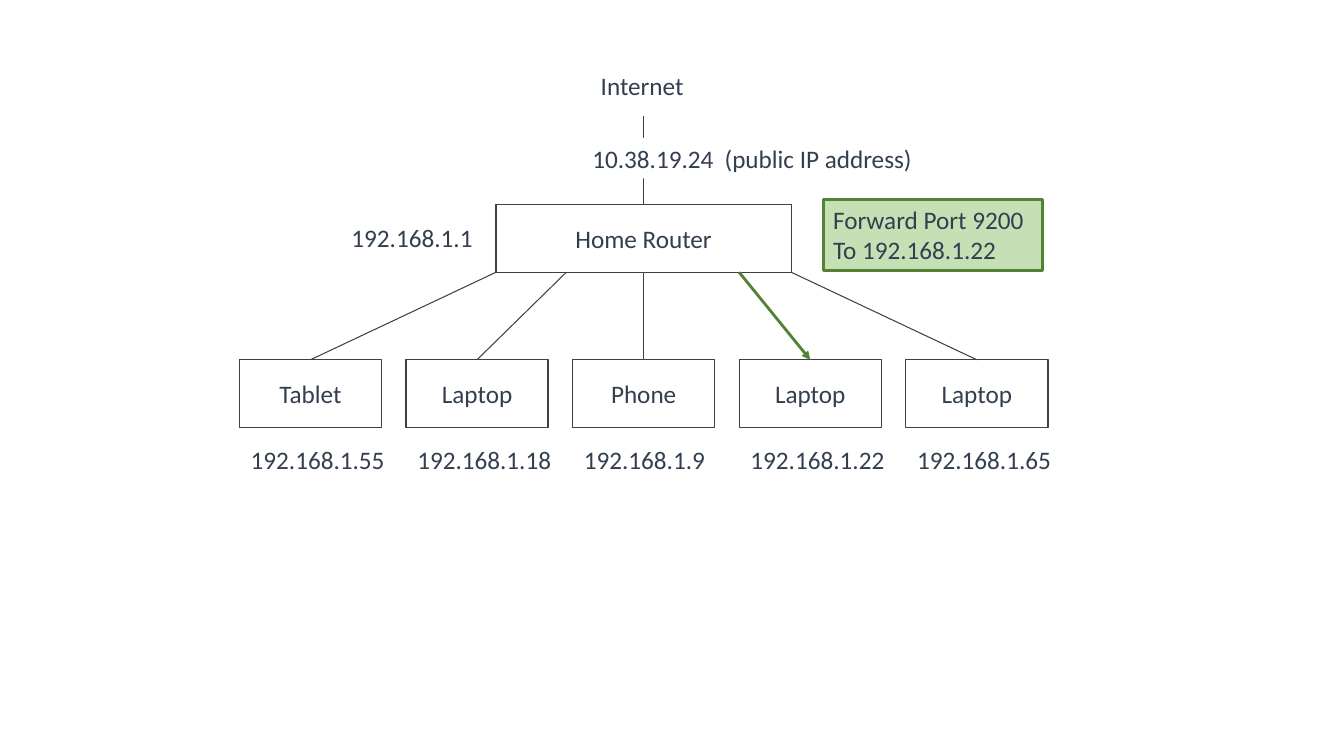
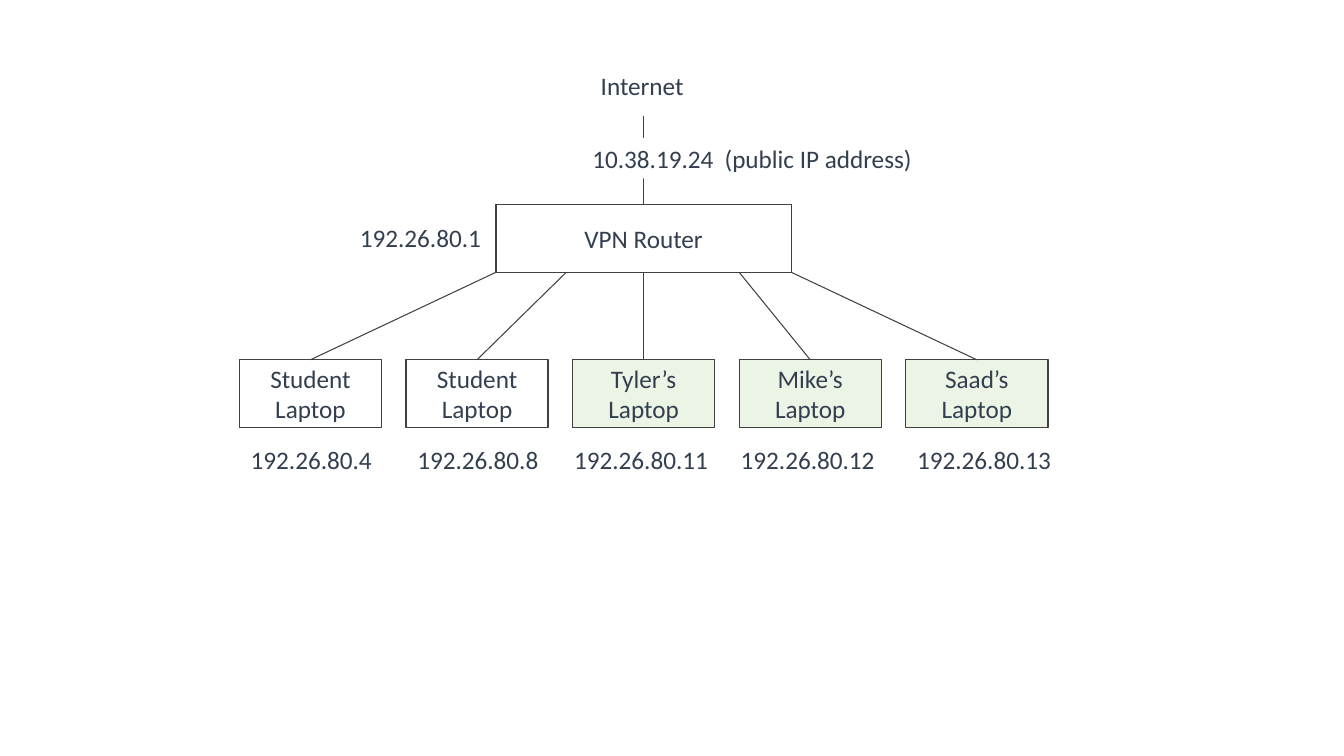
from lxml import etree
from pptx import Presentation
from pptx.dml.color import RGBColor
from pptx.enum import shapes, text
from pptx.oxml import ns
from pptx.util import Pt

INK = RGBColor(0x33, 0x3F, 0x50)
OUTLINE = RGBColor(0x40, 0x40, 0x40)
WHITE = RGBColor(0xFF, 0xFF, 0xFF)
GREEN = RGBColor(0x54, 0x82, 0x35)
RULE_FILL = RGBColor(0xC5, 0xE0, 0xB4)
MEMBER_FILL = RGBColor(0xE2, 0xF0, 0xD9)

# Shared layout, in points
ROUTER_LEFT, ROUTER_TOP, ROUTER_WIDTH, BOX_HEIGHT = 354.25, 146.25, 211, 48.25
ROUTER_BOTTOM = ROUTER_TOP + BOX_HEIGHT
ROUTER_CENTER = ROUTER_LEFT + ROUTER_WIDTH / 2
DEVICE_LEFT, DEVICE_TOP, DEVICE_WIDTH, DEVICE_PITCH = 171, 257, 101.5, 119
LINK_STARTS = [ROUTER_LEFT, 404.5, ROUTER_CENTER, 528, ROUTER_LEFT + ROUTER_WIDTH]
ADDRESS_TOP, LABEL_HEIGHT = 314, 29

# Devices: name, address, shift of the address, highlighted
NETWORKS = [
    {"router": "Home Router", "address": "192.168.1.1", "address_left": 244,
     "forwarded": 3, "rule": "Forward Port 9200\nTo 192.168.1.22",
     "devices": [("Tablet", "192.168.1.55", 0, False),
                 ("Laptop", "192.168.1.18", 0, False),
                 ("Phone", "192.168.1.9", 0, False),
                 ("Laptop", "192.168.1.22", 0, False),
                 ("Laptop", "192.168.1.65", 0, False)]},
    {"router": "VPN Router", "address": "192.26.80.1", "address_left": 250,
     "forwarded": None, "rule": None,
     "devices": [("Student\nLaptop", "192.26.80.4", 0, False),
                 ("Student\nLaptop", "192.26.80.8", 0, False),
                 ("Tyler’s\nLaptop", "192.26.80.11", -7, True),
                 ("Mike’s\nLaptop", "192.26.80.12", -7, True),
                 ("Saad’s Laptop", "192.26.80.13", 0, True)]},
]


def add_label(slide, words, left, top, width, height=LABEL_HEIGHT,
              fill=None, line=None, line_width=1, centered=False):
    """Add a text rectangle; centred ones wrap, the others fit their text."""
    shape = slide.shapes.add_shape(shapes.MSO_SHAPE.RECTANGLE, Pt(left), Pt(top),
                                   Pt(width), Pt(height))
    shape.shadow.inherit = False
    if fill is None:
        shape.fill.background()
    else:
        shape.fill.solid()
        shape.fill.fore_color.rgb = fill
    if line is None:
        shape.line.fill.background()
    else:
        shape.line.color.rgb = line
        shape.line.width = Pt(line_width)
    frame = shape.text_frame
    frame.word_wrap = centered
    frame.vertical_anchor = text.MSO_ANCHOR.MIDDLE if centered else text.MSO_ANCHOR.TOP
    if not centered:
        frame.auto_size = text.MSO_AUTO_SIZE.SHAPE_TO_FIT_TEXT
    for index, row in enumerate(words.split("\n")):
        paragraph = frame.add_paragraph() if index else frame.paragraphs[0]
        paragraph.alignment = text.PP_ALIGN.CENTER if centered else text.PP_ALIGN.LEFT
        run = paragraph.add_run()
        run.text = row
        run.font.name = "Calibri"
        run.font.size = Pt(18)
        run.font.color.rgb = INK
    return shape


def add_link(slide, start, end, arrow=False):
    connector = slide.shapes.add_connector(
        shapes.MSO_CONNECTOR.STRAIGHT, *[Pt(value) for value in (*start, *end)])
    connector.line.color.rgb = GREEN if arrow else OUTLINE
    connector.line.width = Pt(2 if arrow else 0.75)
    if arrow:
        etree.SubElement(connector.line._get_or_add_ln(), ns.qn("a:tailEnd"), type="triangle")
    etree.SubElement(connector._element.spPr, ns.qn("a:effectLst"))


presentation = Presentation()
presentation.slide_width = Pt(960)
presentation.slide_height = Pt(540)

for network in NETWORKS:
    slide = presentation.slides.add_slide(presentation.slide_layouts[6])

    # Router and its local address
    add_label(slide, network["router"], ROUTER_LEFT, ROUTER_TOP, ROUTER_WIDTH, BOX_HEIGHT,
              line=OUTLINE, centered=True)
    add_label(slide, network["address"], network["address_left"], 155.5, 102)

    # Devices, addresses and links
    for index, (name, address, shift, highlighted) in enumerate(network["devices"]):
        left = DEVICE_LEFT + index * DEVICE_PITCH
        device = add_label(slide, name, left, DEVICE_TOP, DEVICE_WIDTH, BOX_HEIGHT,
                           fill=MEMBER_FILL if highlighted else None,
                           line=OUTLINE, centered=True)
        if highlighted:
            color = device._element.spPr.find(ns.qn("a:solidFill"))[0]
            etree.SubElement(color, ns.qn("a:alpha"), val="67000")
        add_label(slide, address, left + 1 + shift, ADDRESS_TOP,
                  102 if len(address) < 12 else 111)
        add_link(slide, (LINK_STARTS[index], ROUTER_BOTTOM),
                 (left + DEVICE_WIDTH / 2, DEVICE_TOP), arrow=index == network["forwarded"])

    # Internet side, with a tab stop before the remark
    add_link(slide, (ROUTER_CENTER, 83), (ROUTER_CENTER, ROUTER_TOP))
    public = add_label(slide, "10.38.19.24\t(public IP address)", 416, 98.5, 245.5, fill=WHITE)
    public.text_frame.word_wrap = True
    properties = public.text_frame.paragraphs[0]._p.get_or_add_pPr()
    tabs = etree.SubElement(properties, ns.qn("a:tabLst"))
    etree.SubElement(tabs, ns.qn("a:tab"), pos=str(Pt(94.5)), algn="l")
    add_label(slide, "Internet", 422, 47, 74)

    # Port forwarding rule
    if network["rule"]:
        add_label(slide, network["rule"], 588, 142.5, 156.5, 51,
                  fill=RULE_FILL, line=GREEN, line_width=2)

presentation.save("out.pptx")
